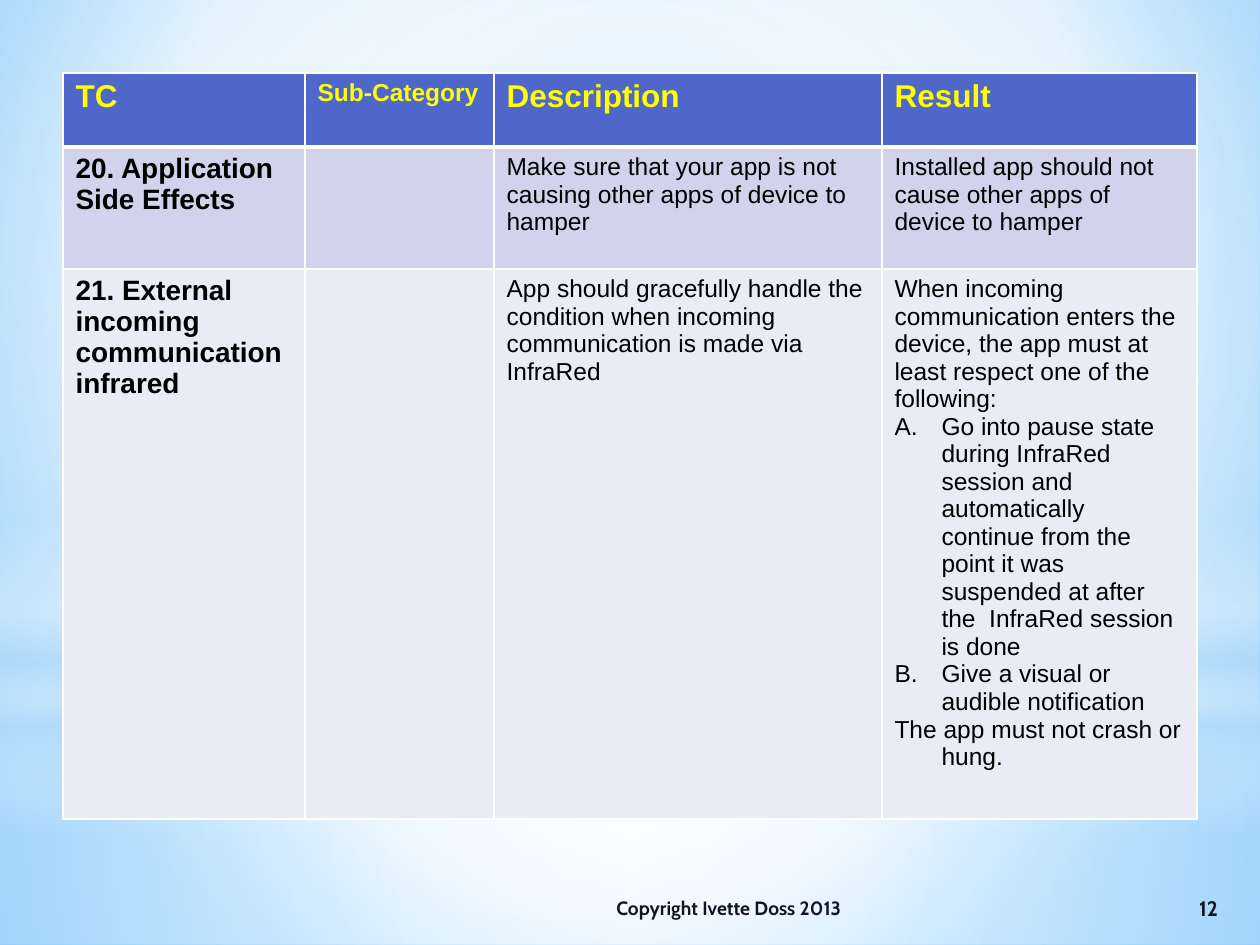
from lxml import etree
from pptx import Presentation
from pptx.dml.color import RGBColor
from pptx.enum.shapes import MSO_SHAPE
from pptx.enum.text import MSO_ANCHOR, PP_ALIGN
from pptx.oxml import parse_xml
from pptx.oxml.ns import qn
from pptx.util import Emu, Pt

RECT, OVAL = MSO_SHAPE.RECTANGLE, MSO_SHAPE.OVAL
MIDDLE = MSO_ANCHOR.MIDDLE
LEFT, CENTER = PP_ALIGN.LEFT, PP_ALIGN.CENTER
DRAWING_NS = "http://schemas.openxmlformats.org/drawingml/2006/main"

COLORS = {
    "white": "FFFFFF", "black": "000000", "yellow": "FFFF00", "footer": "111422",
    "sky": "9ED5FF", "deep": "5BB9FF", "pale": "B4DCFA",
    "header": "4E67C8", "band": "D0D3EB", "plain": "E9EBF5",
}

MIDPOINT = (50, 50, 50, 50)
BACKGROUND = ([(0, "sky", 100), (60, "white", 100), (100, "deep", 100)], (20, 10, 20, 60))
GLOWS = [
    (RECT, (0, 703, 1260, 242),
     [(0, "white", 91), (37, "white", 76), (100, "pale", 79)], MIDPOINT),
    (RECT, (0, 0, 1260, 703),
     [(0, "white", 89), (48, "white", 62), (100, "pale", 79)], MIDPOINT),
    (RECT, (0, 519, 1260, 315),
     [(0, "white", 0), (29, "white", 30), (45, "pale", 40),
      (55, "white", 26), (65, "pale", 60), (100, "white", 0)], None),
    (OVAL, (0, 221, 1260, 703), [(0, "white", 100), (56, "white", 0)], MIDPOINT),
]

TABLE_LEFT, TABLE_TOP = 63, 73
COLUMN_WIDTHS = [242, 189, 388, 315]
ROW_HEIGHTS = [74, 122, 550]
ROW_FILLS = ["header", "band", "plain"]
HANGING = 47
ROWS = [
    [["TC"], ["Sub-Category"], ["Description"], ["Result"]],
    [["20. Application Side Effects"], [],
     ["Make sure that your app is not causing other apps of device to hamper"],
     ["Installed app should not cause other apps of device to hamper"]],
    [["21. External incoming communication infrared"], [],
     ["App should gracefully handle the condition when incoming communication is made via InfraRed"],
     ["When incoming communication enters the device, the app must at least respect "
      "one of the following:",
      ("lettered", "Go into pause state during InfraRed session and automatically continue "
       "from the point it was suspended at after the  InfraRed session is done"),
      ("lettered", "Give a visual or audible notification"),
      ("hanging", "The app must not crash or hung.")]],
]
HEADING = {"name": "Arial", "size": Pt(18), "bold": True}
SUBHEADING = {"name": "Arial", "size": Pt(14), "bold": True}
CASE = {"name": "Arial", "size": Pt(16), "bold": True}
BODY = {"name": "Arial", "size": Pt(14), "bold": False}
HEADER_STYLES = [HEADING, SUBHEADING, HEADING, HEADING]
ROW_STYLES = [CASE, BODY, BODY, BODY]

FOOTERS = [
    ("Copyright Ivette Doss 2013", (604, 883, 572, 50), 11, LEFT),
    ("12", (1176, 883, 65, 50), 12, CENTER),
]


def px(value):
    return Emu(round(value * 914400 / 126))


def apply_gradient(fill, element, stops, target):
    marks = "".join(
        f'<a:gs pos="{pos * 1000}"><a:srgbClr val="{COLORS[color]}">'
        f'<a:alpha val="{alpha * 1000}"/></a:srgbClr></a:gs>'
        for pos, color, alpha in stops)
    if target:
        edges = " ".join(f'{side}="{value * 1000}"' for side, value in zip("ltrb", target))
        direction = f'<a:path path="circle"><a:fillToRect {edges}/></a:path>'
    else:
        direction = '<a:lin ang="5400000" scaled="0"/>'
    fill.solid()
    solid = next(element.iter(qn("a:solidFill")))
    solid.getparent().replace(solid, parse_xml(
        f'<a:gradFill xmlns:a="{DRAWING_NS}" rotWithShape="1">'
        f'<a:gsLst>{marks}</a:gsLst>{direction}</a:gradFill>'))


def write(para, text, style, color):
    span = para.add_run()
    span.text = text
    for key, value in style.items():
        setattr(span.font, key, value)
    span.font.color.rgb = RGBColor.from_string(COLORS[color])


def set_hanging(para, lettered):
    properties = para._p.get_or_add_pPr()
    properties.set("marL", str(px(HANGING)))
    properties.set("indent", str(-px(HANGING)))
    if lettered:
        etree.SubElement(properties, qn("a:buAutoNum"), type="alphaUcPeriod")
    else:
        etree.SubElement(properties, qn("a:buNone"))


def set_borders(cell, widths):
    properties = cell._tc.get_or_add_tcPr()
    for index, (side, width) in enumerate(widths.items()):
        properties.insert(index, parse_xml(
            f'<a:ln{side} xmlns:a="{DRAWING_NS}" w="{Pt(width)}"><a:solidFill>'
            f'<a:srgbClr val="{COLORS["white"]}"/></a:solidFill></a:ln{side}>'))


def add_glows(page):
    for kind, place, stops, target in GLOWS:
        glow = page.shapes.add_shape(kind, *map(px, place))
        glow.shadow.inherit = False
        apply_gradient(glow.fill, glow.element, stops, target)
        glow.line.fill.background()


def add_cases(page):
    frame = page.shapes.add_table(
        len(ROWS), len(COLUMN_WIDTHS), px(TABLE_LEFT), px(TABLE_TOP),
        px(sum(COLUMN_WIDTHS)), px(sum(ROW_HEIGHTS)))
    table = frame.table
    for column, width in zip(table.columns, COLUMN_WIDTHS):
        column.width = px(width)
    for row, height in zip(table.rows, ROW_HEIGHTS):
        row.height = px(height)
    for r, contents in enumerate(ROWS):
        styles = ROW_STYLES if r else HEADER_STYLES
        borders = {"L": 1, "R": 1, "T": 3 if r == 1 else 1, "B": 1 if r else 3}
        for c, paragraphs in enumerate(contents):
            cell = table.cell(r, c)
            cell.fill.solid()
            cell.fill.fore_color.rgb = RGBColor.from_string(COLORS[ROW_FILLS[r]])
            set_borders(cell, borders)
            for index, item in enumerate(paragraphs):
                text_frame = cell.text_frame
                para = text_frame.add_paragraph() if index else text_frame.paragraphs[0]
                kind, text = item if isinstance(item, tuple) else ("flush", item)
                if kind != "flush":
                    set_hanging(para, kind == "lettered")
                write(para, text, styles[c], "black" if r else "yellow")


def add_footers(page):
    for text, place, size, align in FOOTERS:
        box = page.shapes.add_textbox(*map(px, place))
        box.text_frame.word_wrap = True
        box.text_frame.vertical_anchor = MIDDLE
        para = box.text_frame.paragraphs[0]
        para.alignment = align
        write(para, text, {"name": "Cabin", "size": Pt(size), "bold": True}, "footer")


def main():
    deck = Presentation()
    deck.slide_width, deck.slide_height = px(1260), px(945)
    page = deck.slides.add_slide(deck.slide_layouts[6])
    apply_gradient(page.background.fill, page.element, *BACKGROUND)
    add_glows(page)
    add_cases(page)
    add_footers(page)
    deck.save("out.pptx")


if __name__ == "__main__":
    main()
